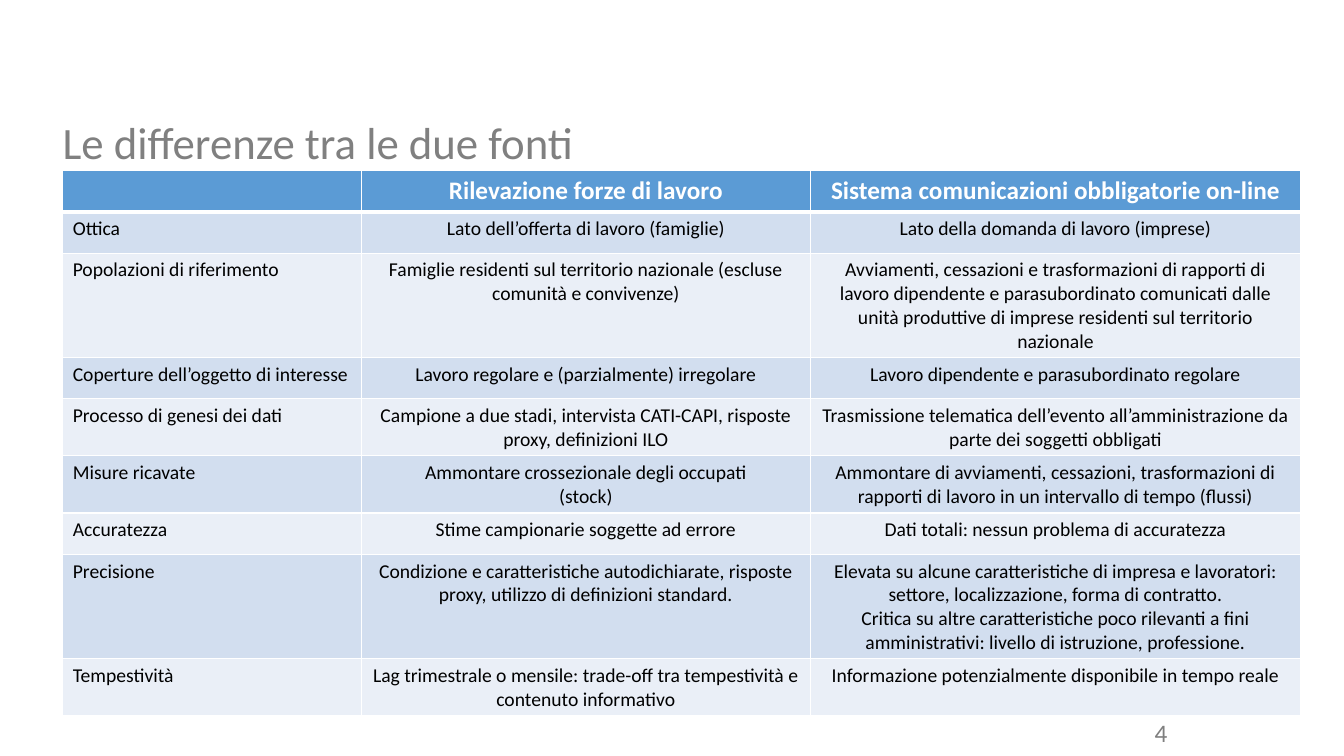
from lxml import etree
from pptx import Presentation
from pptx.dml.color import RGBColor
from pptx.enum.text import MSO_ANCHOR, PP_ALIGN
from pptx.oxml.ns import qn
from pptx.util import Cm, Pt

LEFT, MID, RIGHT = PP_ALIGN.LEFT, PP_ALIGN.CENTER, PP_ALIGN.RIGHT
TOP, CENTRE = MSO_ANCHOR.TOP, MSO_ANCHOR.MIDDLE

WIDTHS = (7.52, 11.33, 12.34)
ROW = 1.04
ROWS = [
    ("", "Rilevazione forze di lavoro", "Sistema comunicazioni obbligatorie on-line"),
    ("Ottica", "Lato dell’offerta di lavoro (famiglie)", "Lato della domanda di lavoro (imprese)"),
    ("Popolazioni di riferimento",
     "Famiglie residenti sul territorio nazionale (escluse comunità e convivenze)",
     "Avviamenti, cessazioni e trasformazioni di rapporti di lavoro dipendente e parasubordinato "
     "comunicati dalle unità produttive di imprese residenti sul territorio nazionale"),
    ("Coperture dell’oggetto di interesse",
     "Lavoro regolare e (parzialmente) irregolare",
     "Lavoro dipendente e parasubordinato regolare"),
    ("Processo di genesi dei dati",
     "Campione a due stadi, intervista CATI-CAPI, risposte proxy, definizioni ILO",
     "Trasmissione telematica dell’evento all’amministrazione da parte dei soggetti obbligati"),
    ("Misure ricavate",
     "Ammontare crossezionale degli occupati\n(stock)",
     "Ammontare di avviamenti, cessazioni, trasformazioni di rapporti di lavoro "
     "in un intervallo di tempo (flussi)"),
    ("Accuratezza", "Stime campionarie soggette ad errore", "Dati totali: nessun problema di accuratezza"),
    ("Precisione",
     "Condizione e caratteristiche autodichiarate, risposte proxy, utilizzo di definizioni standard.",
     "Elevata su alcune caratteristiche di impresa e lavoratori: settore, localizzazione, "
     "forma di contratto.\nCritica su altre caratteristiche poco rilevanti a fini amministrativi: "
     "livello di istruzione, professione."),
    ("Tempestività",
     "Lag trimestrale o mensile: trade-off tra tempestività e contenuto informativo",
     "Informazione potenzialmente disponibile in tempo reale"),
]


def tint(code):
    return RGBColor.from_string(code)


def write(frame, text, size=14, color="000000", bold=False, align=LEFT, space=1.0):
    frame.text = text
    for par in frame.paragraphs:
        par.alignment = align
        par.line_spacing = space
        par.font.name = Deck.font
        par.font.size = Pt(size)
        par.font.bold = bold
        par.font.color.rgb = tint(color)


class Deck:
    font = "Calibri"
    head = "5B9BD5"
    bands = ("EAEFF7", "D2DEEF")
    rule = "FFFFFF"

    def __init__(self):
        self.show = Presentation()
        self.show.slide_width, self.show.slide_height = Cm(33.87), Cm(19.05)
        self.slide = self.show.slides.add_slide(self.show.slide_layouts[6])

    def label(self, text, x, y, w, h, inset=0, anchor=TOP, **style):
        frame = self.slide.shapes.add_textbox(Cm(x), Cm(y), Cm(w), Cm(h)).text_frame
        frame.word_wrap = True
        frame.vertical_anchor = anchor
        frame.margin_left = frame.margin_right = Cm(inset)
        frame.margin_top = frame.margin_bottom = Cm(inset / 2)
        write(frame, text, **style)

    def border(self, cell, low):
        props = cell._tc.get_or_add_tcPr()
        for spot, side in enumerate("LRTB"):
            width = low if side == "B" else 1
            line = etree.Element(qn(f"a:ln{side}"), w=str(Pt(width)))
            fill = etree.SubElement(line, qn("a:solidFill"))
            etree.SubElement(fill, qn("a:srgbClr"), val=self.rule)
            props.insert(spot, line)

    def table(self, rows, widths, x, y, high):
        frame = self.slide.shapes.add_table(
            len(rows), len(widths), Cm(x), Cm(y), Cm(sum(widths)), Cm(high * len(rows)))
        grid = frame.table
        for col, width in zip(grid.columns, widths):
            col.width = Cm(width)
        for r, row in enumerate(rows):
            grid.rows[r].height = Cm(high)
            for c, text in enumerate(row):
                cell = grid.cell(r, c)
                cell.fill.solid()
                cell.fill.fore_color.rgb = tint(self.bands[r % 2] if r else self.head)
                self.border(cell, 1 if r else 3)
                look = {} if r else {"size": 18, "color": "FFFFFF", "bold": True}
                write(cell.text_frame, text, align=MID if c else LEFT, **look)


def main():
    deck = Deck()
    deck.label("4", 26.67, 18, 3, 0.9, inset=0.25, anchor=CENTRE,
               size=18, color="7F7F7F", align=RIGHT)
    deck.label("Le differenze tra le due fonti", 1.58, 3.05, 29.7, 2.29,
               size=32, color="808080", space=0.9)
    deck.table(ROWS, WIDTHS, 1.58, 4.3, ROW)
    deck.show.save("out.pptx")


if __name__ == "__main__":
    main()
